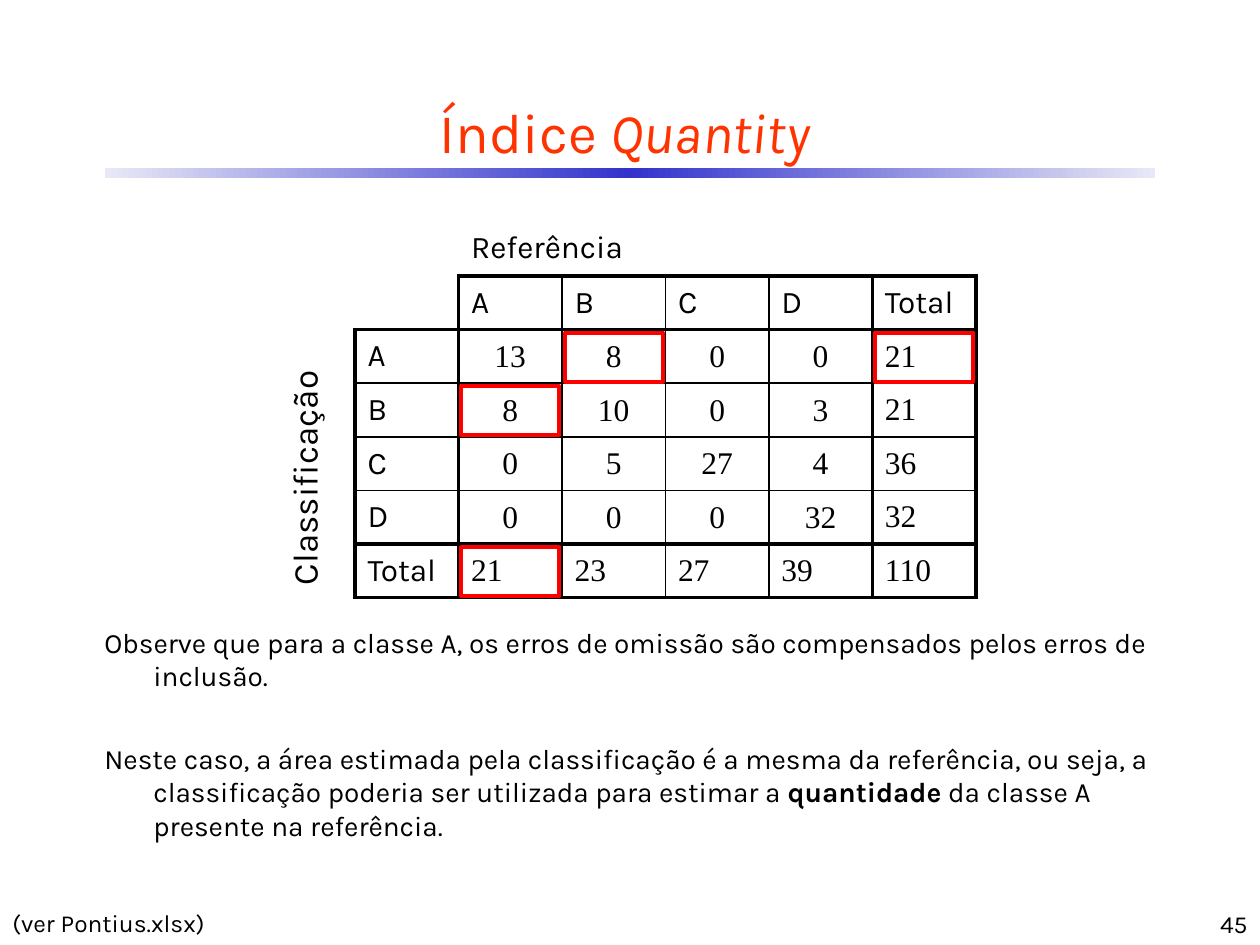
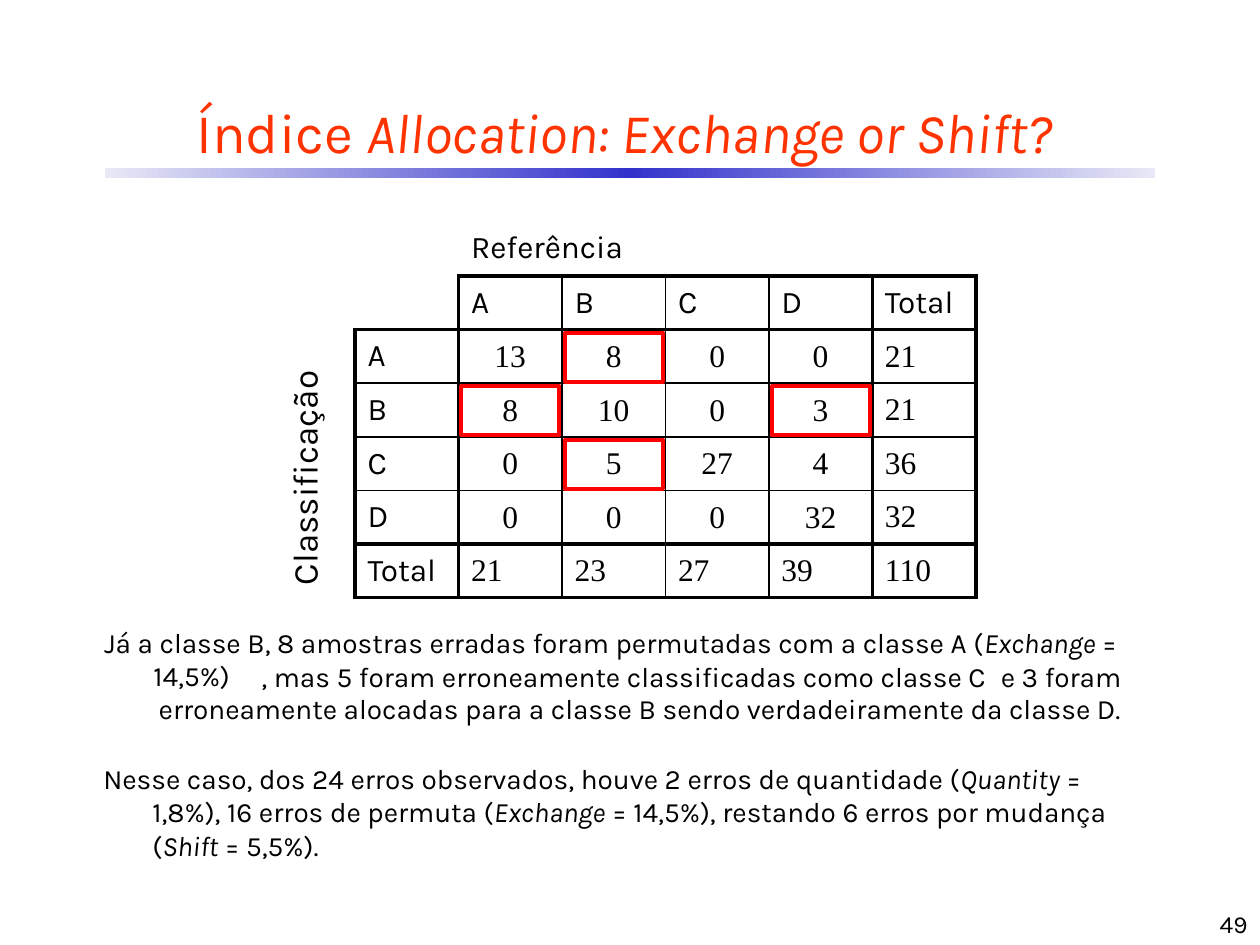
import copy

import pptx
import pptx.dml.color
import pptx.enum.shapes
import pptx.enum.text
import pptx.oxml
import pptx.oxml.ns
import pptx.util
from lxml import etree

PX = 914400 / 126
LABEL_FONT, NUMBER_FONT = "Karla", "Times New Roman"
BLACK, TITLE_RED, MARK_RED = "000000", "FF3300", "FF0000"
BAND_EDGE, BAND_MIDDLE = "E8E8F6", "3333CC"
LEFT = pptx.enum.text.PP_ALIGN.LEFT
CENTER = pptx.enum.text.PP_ALIGN.CENTER
RIGHT = pptx.enum.text.PP_ALIGN.RIGHT
TOP = pptx.enum.text.MSO_ANCHOR.TOP
MIDDLE = pptx.enum.text.MSO_ANCHOR.MIDDLE
BOTTOM = pptx.enum.text.MSO_ANCHOR.BOTTOM
HANGING = 49

# Confusion matrix: header row and class column, with their totals
MATRIX = [
    ["", "A", "B", "C", "D", "Total"],
    ["A", "13", "8", "0", "0", "21"],
    ["B", "8", "10", "0", "3", "21"],
    ["C", "0", "5", "27", "4", "36"],
    ["D", "0", "0", "0", "32", "32"],
    ["Total", "21", "23", "27", "39", "110"],
]
SIZE = len(MATRIX)
MATRIX_LEFT, MATRIX_TOP = 355, 276
CELL_WIDTH, CELL_HEIGHT = 621 / SIZE, 322 / SIZE
SIDE_WIDTH, HEADING_HEIGHT = 61, 56
THICK_EDGES = (1, 2, SIZE, SIZE + 1)


def px(value):
    return pptx.util.Emu(round(value * PX))


def color(value):
    return pptx.dml.color.RGBColor.from_string(value)


def style_paragraph(paragraph, size, font=LABEL_FONT, fill=BLACK, align=LEFT):
    paragraph.alignment = align
    paragraph.font.size = pptx.util.Pt(size)
    paragraph.font.name = font
    paragraph.font.color.rgb = color(fill)


def add_text(slide, box, runs, size, fill=BLACK, align=LEFT, anchor=TOP,
             hanging=0, wrap=True):
    """Runs are plain strings or (text, style) pairs, style being bold or italic."""
    shape = slide.shapes.add_textbox(*map(px, box))
    frame = shape.text_frame
    frame.word_wrap = wrap
    frame.vertical_anchor = anchor
    paragraph = frame.paragraphs[0]
    style_paragraph(paragraph, size, fill=fill, align=align)
    if hanging:
        properties = paragraph._p.get_or_add_pPr()
        properties.set("marL", str(px(hanging)))
        properties.set("indent", str(px(-hanging)))
    for item in runs:
        text, style = (item, None) if isinstance(item, str) else item
        run = paragraph.add_run()
        run.text = text
        if style:
            setattr(run.font, style, True)


def add_body(slide, box, runs, **options):
    add_text(slide, box, runs, 16, hanging=HANGING, **options)


def add_rectangle(slide, box):
    shape = slide.shapes.add_shape(
        pptx.enum.shapes.MSO_SHAPE.RECTANGLE, *map(px, box))
    shape.shadow.inherit = False
    return shape


def add_band(slide):
    band = add_rectangle(slide, (105, 168, 1050, 10))
    band.line.fill.background()
    band.fill.gradient()
    band.fill.gradient_angle = 0
    stops = band._element.spPr.find(".//" + pptx.oxml.ns.qn("a:gsLst"))
    stops.append(copy.deepcopy(stops[0]))
    colors = (BAND_EDGE, BAND_MIDDLE, BAND_EDGE)
    for index, stop in enumerate(band.fill.gradient_stops):
        stop.position = index / 2
        stop.color.rgb = color(colors[index])


def add_frame(slide, title, number):
    """Band, title and slide number, as on every slide."""
    add_band(slide)
    add_text(slide, (42, 84, 1166, 94), title, 32, TITLE_RED, CENTER, MIDDLE)
    add_text(slide, (998, 882, 262, 63), [str(number)], 14,
             align=RIGHT, anchor=BOTTOM)


def in_grid(row, column):
    inside = 1 <= row <= SIZE and 1 <= column <= SIZE
    return inside and (row, column) != (1, 1)


def add_borders(cell, row, column):
    """Rule every side that touches the grid; outer and total edges are thick."""
    sides = (
        ("lnL", 0, -1, column), ("lnR", 0, 1, column + 1),
        ("lnT", -1, 0, row), ("lnB", 1, 0, row + 1),
    )
    properties = cell._tc.get_or_add_tcPr()
    for tag, down, across, edge in sides:
        if in_grid(row, column) or in_grid(row + down, column + across):
            points = 2.25 if edge in THICK_EDGES else 1
            line = etree.SubElement(properties, pptx.oxml.ns.qn("a:" + tag),
                                    w=str(pptx.util.Pt(points)))
            fill = etree.SubElement(line, pptx.oxml.ns.qn("a:solidFill"))
            etree.SubElement(fill, pptx.oxml.ns.qn("a:srgbClr"), val=BLACK)


def write_cell(cell, text, size=18, font=LABEL_FONT, align=LEFT):
    cell.vertical_anchor = MIDDLE
    paragraph = cell.text_frame.paragraphs[0]
    paragraph.text = text
    style_paragraph(paragraph, size, font, align=align)
    return paragraph


def add_matrix(slide):
    table = slide.shapes.add_table(
        SIZE + 1, SIZE + 1,
        px(MATRIX_LEFT - SIDE_WIDTH), px(MATRIX_TOP - HEADING_HEIGHT),
        px(SIDE_WIDTH + SIZE * CELL_WIDTH),
        px(HEADING_HEIGHT + SIZE * CELL_HEIGHT)).table
    table.first_row = table.horz_banding = False
    style = table._tbl.tblPr.find(pptx.oxml.ns.qn("a:tableStyleId"))
    style.text = "{2D5ABB26-0587-4C30-8999-92F81FD0307C}"
    for index in range(SIZE + 1):
        table.columns[index].width = px(CELL_WIDTH if index else SIDE_WIDTH)
        table.rows[index].height = px(CELL_HEIGHT if index else HEADING_HEIGHT)

    for row in range(SIZE + 1):
        for column in range(SIZE + 1):
            cell = table.cell(row, column)
            add_borders(cell, row, column)
            cell.fill.background()
            if not in_grid(row, column):
                continue
            is_number = row > 1 and column > 1
            is_count = is_number and row < SIZE and column < SIZE
            write_cell(cell, MATRIX[row - 1][column - 1],
                       font=NUMBER_FONT if is_number else LABEL_FONT,
                       align=CENTER if is_count else LEFT)
            if is_count:
                cell.margin_left = cell.margin_right = cell.margin_top = px(1)
                cell.margin_bottom = 0

    # Axis names in merged cells
    heading = table.cell(0, 2)
    heading.merge(table.cell(0, SIZE))
    write_cell(heading, "Referência")
    side = table.cell(2, 0)
    side.merge(table.cell(SIZE, 0))
    write_cell(side, "Classificação", 20).line_spacing = pptx.util.Pt(15)
    side._tc.get_or_add_tcPr().set("vert", "vert270")


def mark_cells(slide, cells):
    """Outline matrix cells, given as (row, column) of MATRIX."""
    for row, column in cells:
        mark = add_rectangle(slide, (MATRIX_LEFT + column * CELL_WIDTH + 3,
                                     MATRIX_TOP + row * CELL_HEIGHT + 3, 98, 49))
        mark.fill.background()
        mark.line.color.rgb = color(MARK_RED)
        mark.line.width = pptx.util.Pt(2.25)


def build_quantity(slide):
    add_frame(slide, ["Índice ", ("Quantity", "italic")], 45)
    add_matrix(slide)
    mark_cells(slide, [(1, 2), (2, 1), (1, 5), (5, 1)])
    add_body(slide, (92, 619, 1071, 81), [
        "Observe que para a classe A, os erros de omissão são compensados "
        "pelos erros de inclusão."])
    add_body(slide, (92, 735, 1071, 115), [
        "Neste caso, a área estimada pela classificação é a mesma da "
        "referência, ou seja, a classificação poderia ser utilizada para "
        "estimar a ", ("quantidade", "bold"),
        " da classe A presente na referência."])
    add_text(slide, (0, 902, 253, 43), ["(ver Pontius.xlsx)"], 14)


def build_allocation(slide):
    add_frame(slide, ["Índice ", ("Allocation: Exchange or Shift?", "italic")], 49)
    add_matrix(slide)
    mark_cells(slide, [(1, 2), (2, 1), (2, 4), (3, 2)])
    # First statement, continued in separate boxes
    add_body(slide, (92, 619, 1071, 81), [
        "Já a classe B, 8 amostras erradas foram permutadas com a classe A (",
        ("Exchange", "italic"), " = 14,5%)"])
    add_body(slide, (249, 653, 953, 47), [
        ", mas 5 foram erroneamente classificadas como classe C"])
    add_body(slide, (115, 685, 1050, 47), [
        "erroneamente alocadas para a classe B sendo verdadeiramente da "
        "classe D."], align=CENTER)
    add_text(slide, (988, 653, 146, 47), ["e 3 foram"], 16,
             align=CENTER, wrap=False)
    # Summary of the errors
    add_body(slide, (91, 755, 1071, 115), [
        "Nesse caso, dos 24 erros observados, houve 2 erros de quantidade (",
        ("Quantity", "italic"), " = 1,8%), 16 erros de permuta (",
        ("Exchange", "italic"), " = 14,5%), restando 6 erros por mudança (",
        ("Shift", "italic"), " = 5,5%)."])


def main():
    presentation = pptx.Presentation()
    presentation.slide_width, presentation.slide_height = px(1260), px(945)
    for build in (build_quantity, build_allocation):
        build(presentation.slides.add_slide(presentation.slide_layouts[6]))
    presentation.save("out.pptx")


if __name__ == "__main__":
    main()
